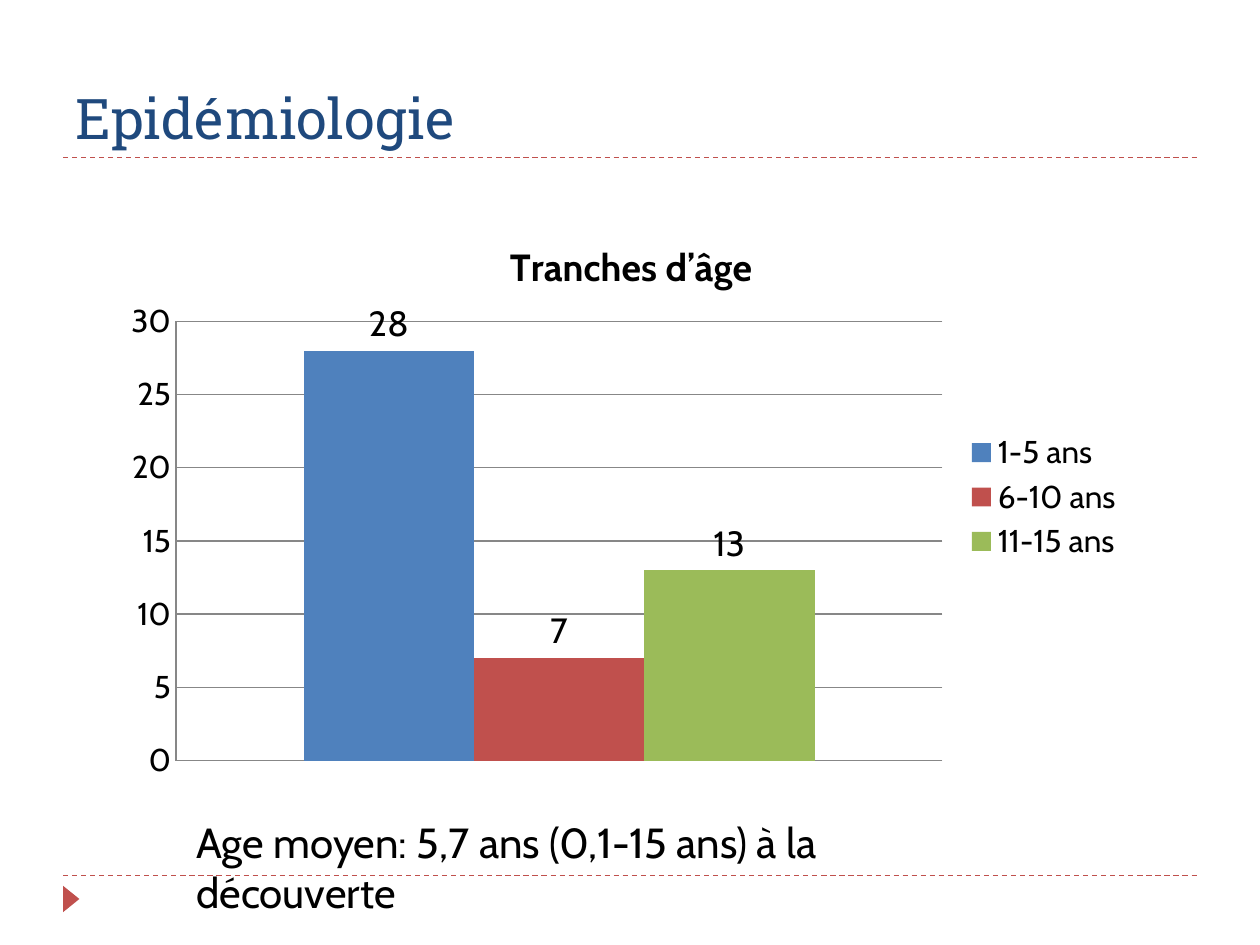
import pptx
import pptx.chart.data
import pptx.dml.color
import pptx.enum.chart
import pptx.enum.dml
import pptx.enum.shapes
import pptx.enum.text
import pptx.oxml
import pptx.oxml.ns
import pptx.util
from pptx.dml.color import RGBColor
from pptx.util import Inches

# Content
HEADING = "Epidémiologie"
CHART_TITLE = "Tranches d’âge "
MEAN_AGE = "Age moyen: 5,7 ans (0,1-15 ans) à la découverte"
BLUE = RGBColor(0x4F, 0x81, 0xBD)
RED = RGBColor(0xC0, 0x50, 0x4D)
GREEN = RGBColor(0x9B, 0xBB, 0x59)
NAVY = RGBColor(0x1F, 0x49, 0x7D)
BLACK = RGBColor(0, 0, 0)
GREY = RGBColor(0x87, 0x87, 0x87)
AGE_GROUPS = [("1-5 ans", 28, BLUE), ("6-10 ans", 7, RED), ("11-15 ans", 13, GREEN)]
RULE_HEIGHTS = [6.95, 1.25]


def style_font(font, size, color=BLACK, name="Cabin", bold=False):
    font.size, font.name, font.bold = pptx.util.Pt(size), name, bold
    font.color.rgb = color


def write_text(frame, text, **style):
    frame.word_wrap = True
    paragraph = frame.paragraphs[0]
    paragraph.alignment = pptx.enum.text.PP_ALIGN.LEFT
    run = paragraph.add_run()
    run.text = text
    style_font(run.font, **style)


def layout_xml(target="", **fractions):
    """Manual chart layout, as fractions of the chart's size."""
    inner = f'<c:layoutTarget val="{target}"/>' if target else ""
    inner += '<c:xMode val="edge"/><c:yMode val="edge"/>'
    inner += "".join(f'<c:{key} val="{value}"/>' for key, value in fractions.items())
    return pptx.oxml.parse_xml(
        f'<c:layout {pptx.oxml.ns.nsdecls("c")}><c:manualLayout>{inner}'
        "</c:manualLayout></c:layout>")


def place(element, layout, after=None):
    for old in element.findall(pptx.oxml.ns.qn("c:layout")):
        element.remove(old)
    previous = element.find(pptx.oxml.ns.qn(after)) if after else None
    element.insert(0 if previous is None else element.index(previous) + 1, layout)


deck = pptx.Presentation()
deck.slide_width, deck.slide_height = Inches(10), Inches(7.5)
slide = deck.slides.add_slide(deck.slide_layouts[5])
shapes = slide.shapes

# Dashed rules and corner marker
for y in RULE_HEIGHTS:
    rule = shapes.add_connector(pptx.enum.shapes.MSO_CONNECTOR.STRAIGHT,
                                Inches(0.5), Inches(y), Inches(9.5), Inches(y))
    rule.line.color.rgb = RED
    rule.line.width = pptx.util.Pt(0.75)
    rule.line.dash_style = pptx.enum.dml.MSO_LINE.DASH
    rule._element.spPr.append(
        pptx.oxml.parse_xml(f'<a:effectLst {pptx.oxml.ns.nsdecls("a")}/>'))

marker = shapes.add_shape(pptx.enum.shapes.MSO_SHAPE.ISOSCELES_TRIANGLE,
                          Inches(0.46), Inches(7.07), Inches(0.21), Inches(0.13))
marker.rotation = 90
marker.shadow.inherit = False
marker.fill.solid()
marker.fill.fore_color.rgb = RED
marker.line.fill.background()

# Title
heading = shapes.title
heading.left, heading.top = Inches(0.5), Inches(0.17)
heading.width, heading.height = Inches(9), Inches(1.08)
heading.text_frame.vertical_anchor = pptx.enum.text.MSO_ANCHOR.BOTTOM
write_text(heading.text_frame, HEADING, size=32, color=NAVY, name="Roboto Slab")

# Age chart
ages = pptx.chart.data.CategoryChartData()
ages.categories = ["1"]
for name, count, _ in AGE_GROUPS:
    ages.add_series(name, [count])
chart = shapes.add_chart(pptx.enum.chart.XL_CHART_TYPE.COLUMN_CLUSTERED,
                         Inches(0.91), Inches(1.62), Inches(8.11), Inches(4.65),
                         ages).chart
style_font(chart.font, 18)
chart.has_title = True
chart_title = chart.chart_title.text_frame.paragraphs[0].add_run()
chart_title.text = CHART_TITLE
style_font(chart_title.font, 21.6, bold=True)
chart.has_legend = True
chart.legend.position = pptx.enum.chart.XL_LEGEND_POSITION.RIGHT
chart.legend.include_in_layout = False

plot = chart.plots[0]
plot.gap_width, plot.overlap, plot.vary_by_categories = 150, 0, False
for series, (_, _, color) in zip(plot.series, AGE_GROUPS):
    series.format.fill.solid()
    series.format.fill.fore_color.rgb = color
    labels = series.data_labels
    labels.show_value = True
    labels.position = pptx.enum.chart.XL_LABEL_POSITION.OUTSIDE_END
    style_font(labels.font, 20)

# Axes
for axis in (chart.category_axis, chart.value_axis):
    axis.major_tick_mark = axis.minor_tick_mark = pptx.enum.chart.XL_TICK_MARK.NONE
    axis.format.line.color.rgb = GREY
chart.category_axis.tick_label_position = pptx.enum.chart.XL_TICK_LABEL_POSITION.NONE
counts = chart.value_axis
counts.minimum_scale, counts.maximum_scale, counts.major_unit = 0, 30, 5
counts.has_major_gridlines = True
counts.major_gridlines.format.line.color.rgb = GREY

# Positions inside the chart
place(chart.chart_title._element, layout_xml(x=0.38, y=0.05), after="c:tx")
place(plot._element.getparent(), layout_xml("inner", x=0.06, y=0.2, w=0.75, h=0.75))

# Mean age
mean_age = shapes.add_textbox(Inches(1.46), Inches(6.43), Inches(6.69), Inches(0.5))
write_text(mean_age.text_frame, MEAN_AGE, size=24)
mean_age.text_frame.auto_size = pptx.enum.text.MSO_AUTO_SIZE.SHAPE_TO_FIT_TEXT

deck.save("out.pptx")
